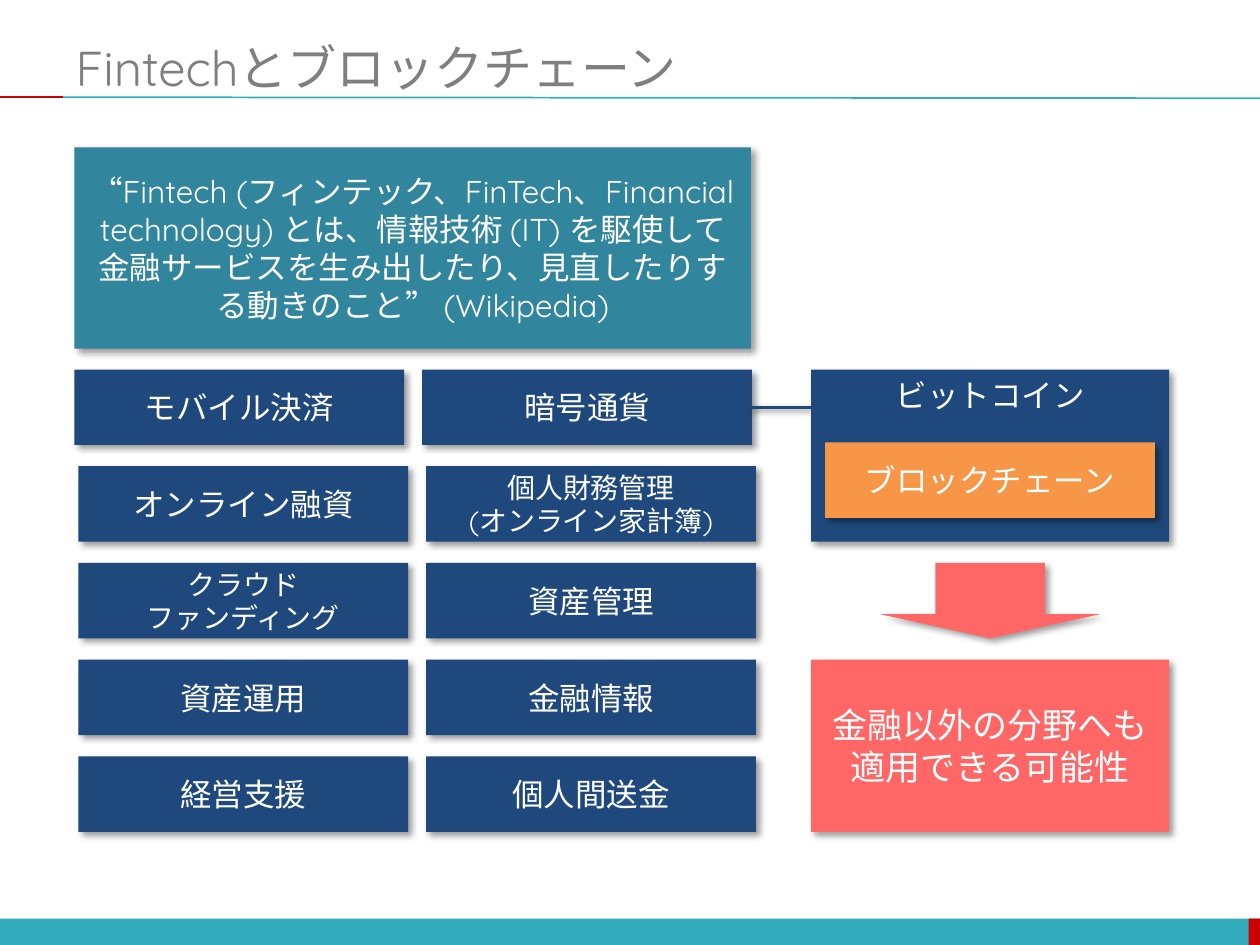
from dataclasses import dataclass
from typing import NamedTuple, Optional

from pptx import Presentation
from pptx import util as u
from pptx.dml.color import RGBColor
from pptx.enum import shapes, text
from pptx.oxml import ns
from lxml import etree


@dataclass(frozen=True)
class Theme:
    font: str = "Quicksand"
    teal: str = "33ACBD"
    red: str = "CC0000"
    navy: str = "1F497D"
    sea: str = "31859C"
    orange: str = "F79646"
    coral: str = "FF6666"
    grey: str = "7F7F7F"
    white: str = "FFFFFF"
    black: str = "000000"
    title_size: int = 28
    large: int = 20
    body: int = 18
    small: int = 16


class Shadow(NamedTuple):
    opacity: int
    blur: float
    distance: float
    angle: int


class Area(NamedTuple):
    """Left, top, width and height in centimetres."""
    left: float
    top: float
    width: float
    height: float

    def lengths(self) -> list:
        return [u.Cm(value) for value in self]


@dataclass(frozen=True)
class Panel:
    area: Area
    fill: str
    lines: tuple = ()
    size: int = 18
    anchor: text.MSO_ANCHOR = text.MSO_ANCHOR.MIDDLE
    shadow: Optional[Shadow] = Shadow(40, 4, 3, 45)
    kind: shapes.MSO_SHAPE = shapes.MSO_SHAPE.RECTANGLE


THEME = Theme()
LINE_SHADOW = Shadow(38, 3.1, 1.6, 90)

# Grid of services: the first row sits slightly left of the others
CELL_W, CELL_H = 6.65, 1.52
GRID_TOP, ROW_STEP, COLUMN_STEP = 7.45, 1.95, 7.01
FIRST_LEFT, OTHER_LEFT = 1.5, 1.58
SERVICES = (
    (("モバイル決済",), ("暗号通貨",)),
    (("オンライン融資",), ("個人財務管理", "(オンライン家計簿)")),
    (("クラウド", "ファンディング"), ("資産管理",)),
    (("資産運用",), ("金融情報",)),
    (("経営支援",), ("個人間送金",)),
)
SIDE_LEFT, SIDE_W, SIDE_H = 16.35, 7.22, ROW_STEP + CELL_H


def row_top(row: int) -> float:
    return GRID_TOP + row * ROW_STEP


def cast_shadow(effects, shadow: Shadow) -> None:
    outer = etree.SubElement(
        effects, ns.qn("a:outerShdw"), blurRad=str(u.Pt(shadow.blur)),
        dist=str(u.Pt(shadow.distance)), dir=str(shadow.angle * 60000),
        rotWithShape="0")
    color = etree.SubElement(outer, ns.qn("a:srgbClr"), val=THEME.black)
    etree.SubElement(color, ns.qn("a:alpha"), val=str(shadow.opacity * 1000))


def style_paragraph(para, size: int, color: str, align) -> None:
    para.alignment = align
    para.font.name = THEME.font
    para.font.size = u.Pt(size)
    para.font.color.rgb = RGBColor.from_string(color)


def draw_panel(page, panel: Panel):
    box = page.shapes.add_shape(panel.kind, *panel.area.lengths())
    box.shadow.inherit = False
    box.fill.solid()
    box.fill.fore_color.rgb = RGBColor.from_string(panel.fill)
    box.line.fill.background()
    if panel.shadow:
        cast_shadow(box._element.spPr.find(ns.qn("a:effectLst")), panel.shadow)
    frame = box.text_frame
    frame.word_wrap = True
    frame.vertical_anchor = panel.anchor
    for index, line in enumerate(panel.lines):
        para = frame.add_paragraph() if index else frame.paragraphs[0]
        para.text = line
        style_paragraph(para, panel.size, THEME.white, text.PP_ALIGN.CENTER)
    return box


def draw_line(page, start: tuple, end: tuple, color: str, width: float,
              shadow: Optional[Shadow] = None):
    line = page.shapes.add_connector(
        shapes.MSO_CONNECTOR.STRAIGHT, *[u.Cm(value) for value in start + end])
    line.line.color.rgb = RGBColor.from_string(color)
    line.line.width = u.Pt(width)
    effects = etree.SubElement(line._element.spPr, ns.qn("a:effectLst"))
    if shadow:
        cast_shadow(effects, shadow)
    return line


def draw_title(page, wording: str) -> None:
    title = page.shapes.title
    title.left, title.top, title.width, title.height = Area(
        1.27, 0.76, 24.13, 1.17).lengths()
    frame = title.text_frame
    frame.auto_size = text.MSO_AUTO_SIZE.NONE
    frame.vertical_anchor = text.MSO_ANCHOR.MIDDLE
    frame.text = wording
    style_paragraph(frame.paragraphs[0], THEME.title_size, THEME.grey,
                    text.PP_ALIGN.LEFT)


def draw_services(page) -> dict:
    boxes = {}
    for row, cells in enumerate(SERVICES):
        left = OTHER_LEFT if row else FIRST_LEFT
        for column, lines in enumerate(cells):
            area = Area(left + column * COLUMN_STEP, row_top(row), CELL_W, CELL_H)
            size = THEME.small if len(lines) > 1 else THEME.body
            boxes[row, column] = draw_panel(
                page, Panel(area, THEME.navy, lines, size))
    return boxes


def main() -> None:
    deck = Presentation()
    deck.slide_width, deck.slide_height = u.Cm(25.4), u.Cm(19.05)
    page = deck.slides.add_slide(deck.slide_layouts[5])

    # Footer bar and title rule
    draw_panel(page, Panel(Area(0, 18.52, 25.4, 0.55), THEME.teal, shadow=None))
    draw_panel(page, Panel(Area(25.17, 18.52, 0.23, 0.55), THEME.red, shadow=None))
    draw_line(page, (1.27, 1.96), (25.4, 1.98), THEME.teal, 1)
    draw_line(page, (0, 1.96), (1.27, 1.96), THEME.red, 1)
    draw_title(page, "Fintechとブロックチェーン")

    # Definition and the services below it
    definition = (
        "“Fintech (フィンテック、FinTech、Financial technology) とは、"
        "情報技術 (IT) を駆使して金融サービスを生み出したり、"
        "見直したりする動きのこと” (Wikipedia)")
    draw_panel(page, Panel(Area(FIRST_LEFT, 2.97, 13.64, 4.06), THEME.sea,
                           (definition,), THEME.body))
    services = draw_services(page)

    # Cryptocurrency leads to bitcoin and its blockchain
    middle = row_top(0) + CELL_H / 2
    link = draw_line(page, (FIRST_LEFT + COLUMN_STEP + CELL_W, middle),
                     (SIDE_LEFT, middle), THEME.navy, 2, LINE_SHADOW)
    link.begin_connect(services[0, 1], 3)
    draw_panel(page, Panel(Area(SIDE_LEFT, row_top(0), SIDE_W, SIDE_H), THEME.navy,
                           ("ビットコイン",), THEME.body, text.MSO_ANCHOR.TOP))
    draw_panel(page, Panel(
        Area(SIDE_LEFT + (SIDE_W - CELL_W) / 2, 8.92, CELL_W, CELL_H),
        THEME.orange, ("ブロックチェーン",), THEME.body))

    # Outlook beyond finance
    arrow_width = 4.42
    arrow = draw_panel(page, Panel(
        Area(SIDE_LEFT + (SIDE_W - arrow_width) / 2, row_top(2), arrow_width, CELL_H),
        THEME.coral, kind=shapes.MSO_SHAPE.DOWN_ARROW))
    arrow.adjustments[0], arrow.adjustments[1] = 0.5, 0.32
    draw_panel(page, Panel(Area(SIDE_LEFT, row_top(3), SIDE_W, SIDE_H), THEME.coral,
                           ("金融以外の分野へも適用できる可能性",), THEME.large))

    deck.save("out.pptx")


if __name__ == "__main__":
    main()
